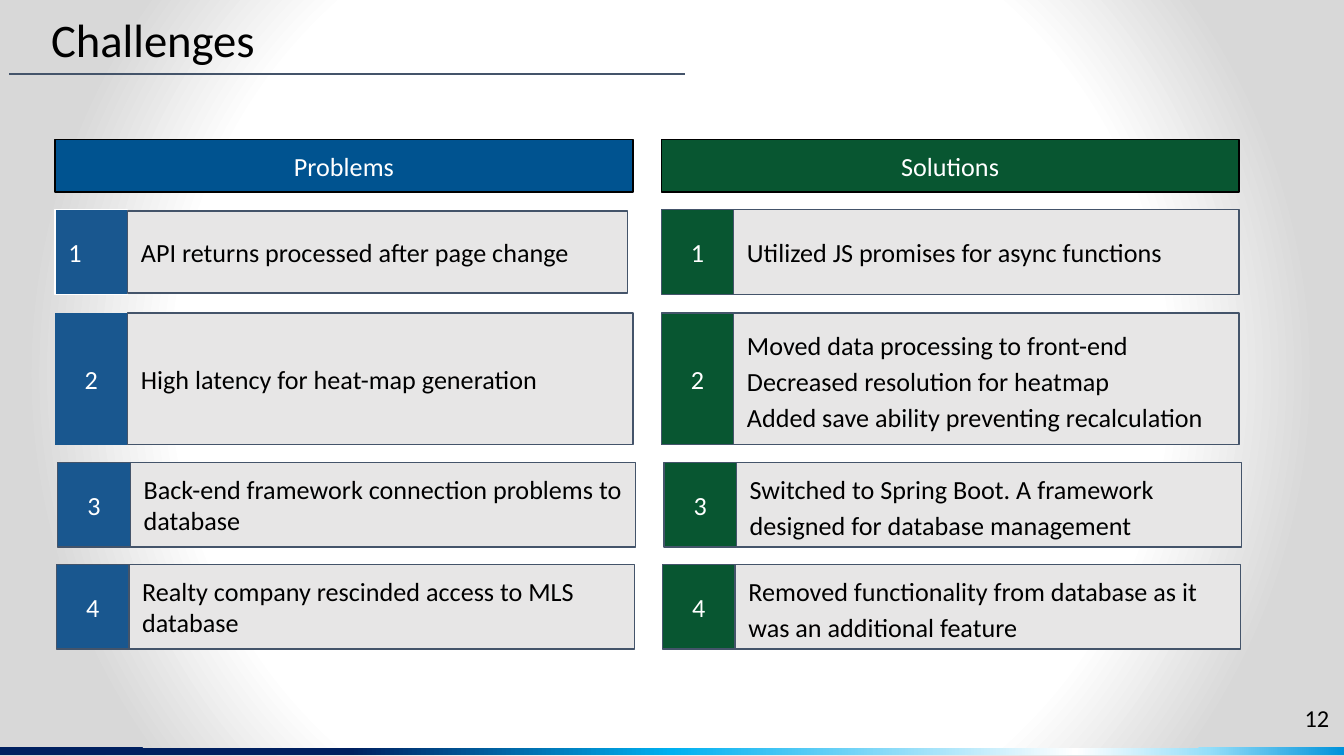
from dataclasses import dataclass

from lxml.etree import SubElement as Sub
from pptx import Presentation
from pptx.dml.color import RGBColor as RGB
from pptx.enum.shapes import MSO_CONNECTOR as Conn, MSO_SHAPE as Kind
from pptx.enum.text import MSO_ANCHOR as Anchor, PP_ALIGN as Align
from pptx.oxml.ns import qn
from pptx.util import Inches, Pt


@dataclass(frozen=True)
class Theme:
    font: str = "Calibri"
    black: str = "000000"
    white: str = "FFFFFF"
    slate: str = "44546A"
    pale: str = "E7E6E6"
    gray: str = "D8D8D8"
    blue: str = "005390"
    steel: str = "19578F"
    green: str = "085631"
    title: float = 25
    body: float = 14
    page: float = 13
    rule: float = 0.75


T = Theme()
BAR = [(0, "002060"), (26, "002060"), (50, "00B0F0"),
       (80, T.white), (90, "94DEF9"), (100, "0092DA")]

# Columns: left, heading, heading fill, number fill
COLS = [(0.41, "Problems", T.blue, T.steel),
        (4.92, "Solutions", T.green, T.green)]
HEAD_W, NUM_W = 4.3, 0.54
BODY_W = HEAD_W - NUM_W

# Rows: top, height, shift to the right, problem, solution, solution spacing
ROWS = [
    (1.56, 0.63, 0, "API returns processed after page change",
     "Utilized JS promises for async functions", 1),
    (2.33, 0.98, 0, "High latency for heat-map generation",
     "Moved data processing to front-end\nDecreased resolution for heatmap\n"
     "Added save ability preventing recalculation", 1.15),
    (3.44, 0.63, 0.02, "Back-end framework connection problems to database",
     "Switched to Spring Boot. A framework designed for database management", 1.15),
    (4.2, 0.63, 0.01, "Realty company rescinded access to MLS database",
     "Removed functionality from database as it was an additional feature", 1.15),
]


def place(x, y, w, h):
    return Inches(x), Inches(y), Inches(w), Inches(h)


def write(shape, text, size=T.body, color=T.black, align=Align.LEFT,
          anchor=Anchor.MIDDLE, inset=(0.1, 0.1, 0.1, 0.1), space=1):
    frame = shape.text_frame
    frame.word_wrap = True
    frame.vertical_anchor = anchor
    (frame.margin_left, frame.margin_top,
     frame.margin_right, frame.margin_bottom) = map(Inches, inset)
    frame.text = text
    for para in frame.paragraphs:
        para.alignment = align
        para.line_spacing = space
        font = para.runs[0].font
        font.name, font.size = T.font, Pt(size)
        font.color.rgb = RGB.from_string(color)


def blend(fill, owner, stops, round_=False):
    """Give the owner a linear or a circular gradient fill."""
    fill.solid()
    old = owner.find(".//" + qn("a:solidFill"))
    grad = old.makeelement(qn("a:gradFill"), {"rotWithShape": "1"})
    old.getparent().replace(old, grad)
    group = Sub(grad, qn("a:gsLst"))
    for pos, color in stops:
        stop = Sub(group, qn("a:gs"), pos=str(pos * 1000))
        Sub(stop, qn("a:srgbClr"), val=color)
    if round_:
        shade = Sub(grad, qn("a:path"), {"path": "circle"})
        Sub(shade, qn("a:fillToRect"), dict.fromkeys("ltrb", "50000"))
    else:
        Sub(grad, qn("a:lin"), ang="0", scaled="0")


def box(slide, area, fill=None, line=None):
    shape = slide.shapes.add_shape(Kind.RECTANGLE, *place(*area))
    shape.shadow.inherit = False
    if fill:
        shape.fill.solid()
        shape.fill.fore_color.rgb = RGB.from_string(fill)
    if line:
        shape.line.color.rgb = RGB.from_string(line)
        shape.line.width = Pt(T.rule)
    else:
        shape.line.fill.background()
    return shape


def label(slide, area, text, **form):
    write(slide.shapes.add_textbox(*place(*area)), text, **form)


def rule(slide, x, y, end):
    line = slide.shapes.add_connector(
        Conn.STRAIGHT, Inches(x), Inches(y), Inches(end), Inches(y))
    line.line.color.rgb = RGB.from_string(T.slate)
    line.line.width = Pt(T.rule)
    Sub(line._element.spPr, qn("a:effectLst"))


def backdrop(slide):
    blend(slide.background.fill, slide._element,
          [(0, T.white), (10, T.white), (97, T.gray), (100, T.gray)], True)
    bar = box(slide, (0, 5.56, 10, 0.06))
    blend(bar.fill, bar._element, BAR)
    glow = box(slide, (-0.02, 0, 10.02, 5.56))
    blend(glow.fill, glow._element,
          [(0, T.white), (64, T.white), (84, T.gray), (100, T.gray)], True)


def entry(slide, num, area, text, fill, edge=T.slate, align=Align.CENTER,
          trim=0, space=1):
    """Draw a numbered cell with its text cell; trim shrinks the latter."""
    x, y, h = area
    cell = box(slide, (x, y, NUM_W, h), fill, edge)
    write(cell, str(num), color=T.white, align=align)
    body = box(slide, (x + NUM_W, y + trim / 4, BODY_W - trim, h - trim / 2),
               T.pale, T.slate)
    write(body, text, space=space)


def main():
    deck = Presentation()
    deck.slide_width = Inches(10)
    deck.slide_height = deck.slide_width * 9 // 16
    slide = deck.slides.add_slide(deck.slide_layouts[6])
    backdrop(slide)

    # Page number, title and rule
    label(slide, (9.36, 5.19, 0.6, 0.43), "12", size=T.page, align=Align.RIGHT,
          anchor=Anchor.TOP, inset=(0.07, 0.04, 0.07, 0.04))
    label(slide, (0, 0, 9.32, 0.63), "Challenges", size=T.title,
          inset=(0.38, 0.04, 0.07, 0.04), space=0.9)
    rule(slide, 0.07, 0.55, 5.1)

    # Headings
    for left, head, fill, _ in COLS:
        write(box(slide, (left, 1.04, HEAD_W, 0.39), fill, T.black), head,
              color=T.white, align=Align.CENTER)

    # Numbered rows; the first two problems have their own look
    looks = {1: dict(edge=T.white, align=Align.LEFT, trim=0.04),
             2: dict(edge=None)}
    (left, _, _, steel), (right, _, _, green) = COLS
    for num, (y, h, shift, issue, fix, space) in enumerate(ROWS, 1):
        entry(slide, num, (left + shift, y, h), issue, steel, **looks.get(num, {}))
        entry(slide, num, (right + shift, y, h), fix, green, space=space)

    deck.save("out.pptx")


if __name__ == "__main__":
    main()
